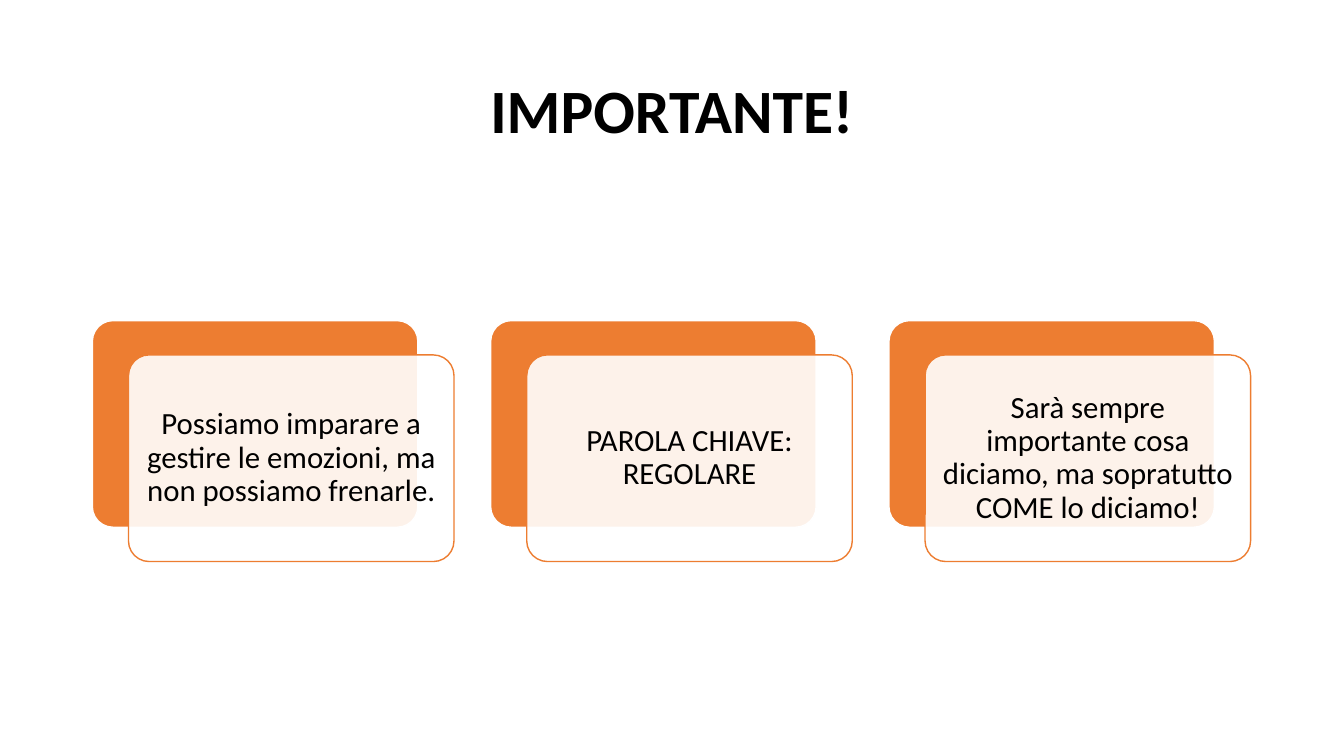
import pptx
import pptx.util
import pptx.dml.color
import pptx.enum.shapes
import pptx.enum.text
import pptx.oxml.ns
import lxml.etree

Pt = pptx.util.Pt
ORANGE = pptx.dml.color.RGBColor(0xED, 0x7D, 0x31)
WHITE = pptx.dml.color.RGBColor(0xFF, 0xFF, 0xFF)
BLACK = pptx.dml.color.RGBColor(0x00, 0x00, 0x00)
FONT = "Calibri"

MESSAGES = [
    "Possiamo imparare a gestire le emozioni, ma non possiamo frenarle.",
    "PAROLA CHIAVE: REGOLARE",
    "Sarà sempre importante cosa diciamo, ma sopratutto COME lo diciamo!",
]

# Card geometry in points
CARD_LEFT, CARD_TOP = 66, 229
CARD_WIDTH, CARD_HEIGHT = 232.5, 147.6
CARD_PITCH = 284.5
OFFSET_X, OFFSET_Y = 25.8, 24.5
TEXT_INSET = 6.6


def write_text(shape, text, size, bold=False):
    text_frame = shape.text_frame
    text_frame.text = text
    text_frame.word_wrap = True
    text_frame.vertical_anchor = pptx.enum.text.MSO_ANCHOR.MIDDLE
    paragraph = text_frame.paragraphs[0]
    paragraph.alignment = pptx.enum.text.PP_ALIGN.CENTER
    paragraph.line_spacing = 0.9
    font = paragraph.runs[0].font
    font.name = FONT
    font.size = Pt(size)
    font.bold = bold
    font.color.rgb = BLACK


def add_title(slide, text):
    title = slide.shapes.title
    title.left, title.top = Pt(66), Pt(28.75)
    title.width, title.height = Pt(828), Pt(104.4)
    write_text(title, text, 44, bold=True)


def add_panel(slide, left, top, fill_color, line_color):
    panel = slide.shapes.add_shape(
        pptx.enum.shapes.MSO_SHAPE.ROUNDED_RECTANGLE,
        Pt(left), Pt(top), Pt(CARD_WIDTH), Pt(CARD_HEIGHT))
    panel.adjustments[0] = 0.1
    panel.shadow.inherit = False
    panel.fill.solid()
    panel.fill.fore_color.rgb = fill_color
    panel.line.color.rgb = line_color
    panel.line.width = Pt(1)
    return panel


def set_opacity(shape, percent):
    qn = pptx.oxml.ns.qn
    color = shape.fill._xPr.find(qn("a:solidFill")).find(qn("a:srgbClr"))
    alpha = lxml.etree.SubElement(color, qn("a:alpha"))
    alpha.set("val", str(percent * 1000))


def add_message_card(slide, left, message):
    add_panel(slide, left, CARD_TOP, ORANGE, WHITE)
    front = add_panel(slide, left + OFFSET_X, CARD_TOP + OFFSET_Y, WHITE, ORANGE)
    set_opacity(front, 90)
    text_frame = front.text_frame
    text_frame.margin_left = text_frame.margin_right = Pt(TEXT_INSET)
    text_frame.margin_top = text_frame.margin_bottom = Pt(TEXT_INSET)
    write_text(front, message, 22)


def main():
    presentation = pptx.Presentation()
    presentation.slide_width, presentation.slide_height = Pt(960), Pt(540)
    slide = presentation.slides.add_slide(presentation.slide_layouts[5])

    # Title
    add_title(slide, "IMPORTANTE!")

    # Row of message cards
    for index, message in enumerate(MESSAGES):
        add_message_card(slide, CARD_LEFT + index * CARD_PITCH, message)

    presentation.save("out.pptx")


if __name__ == "__main__":
    main()
